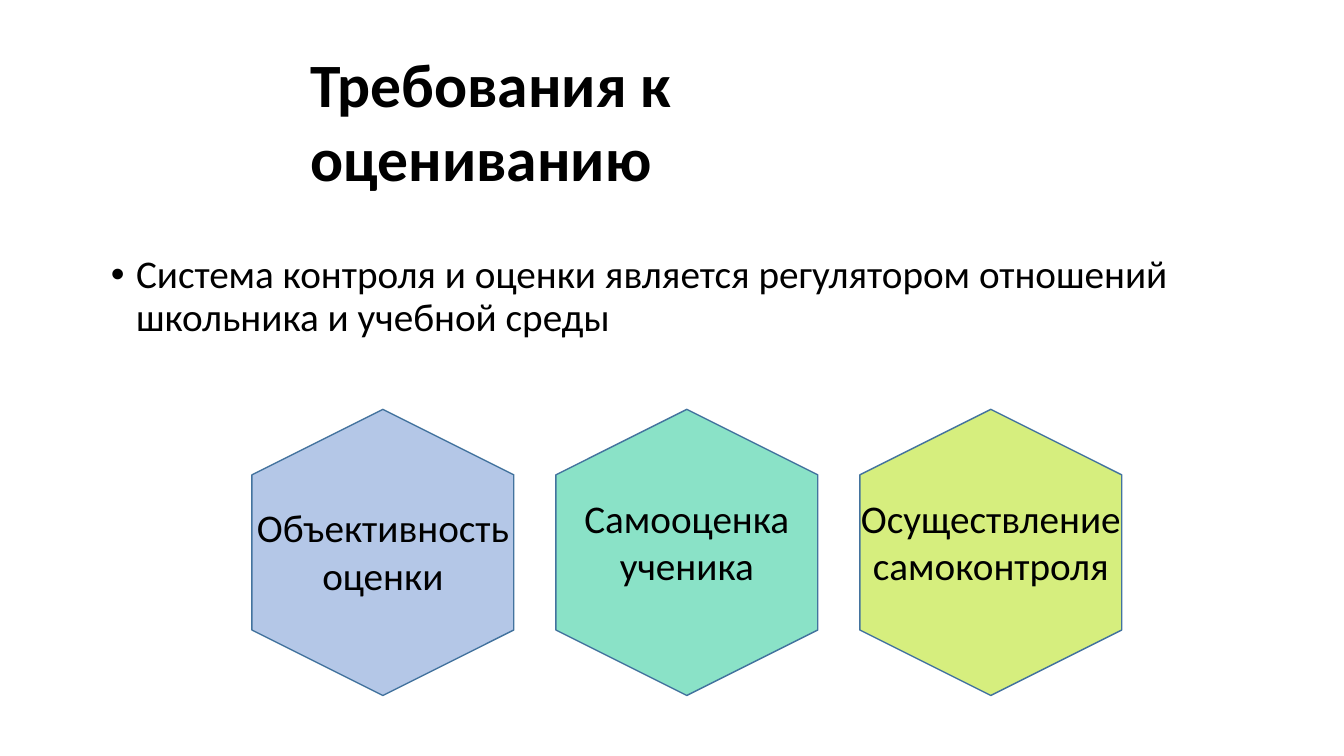
import pptx
import pptx.util
import pptx.dml.color
import pptx.enum.shapes
import pptx.enum.text
from pptx.util import Cm, Pt

TITLE = "Требования к оцениванию"
BODY = "Система контроля и оценки является регулятором отношений школьника и учебной среды"
REQUIREMENTS = [
    ("Объективность оценки", "B4C7E7", 12.57),
    ("Самооценка ученика", "8AE2C7", 12.34),
    ("Осуществление самоконтроля", "D6EE7E", 12.34),
]

FIRST_CENTER, PITCH = 9.65, 7.66
HEX_W, HEX_H, HEX_TOP = 7.21, 6.6, 10.62
LABEL_W, LABEL_H = 7.95, 2.64


def rgb(value):
    return pptx.dml.color.RGBColor.from_string(value)


def place(sp, left, top, width, height):
    sp.left, sp.top, sp.width, sp.height = Cm(left), Cm(top), Cm(width), Cm(height)


def write(sp, text, size, align, bold=False):
    tf = sp.text_frame
    tf.word_wrap = True
    tf.auto_size = pptx.enum.text.MSO_AUTO_SIZE.NONE
    tf.vertical_anchor = pptx.enum.text.MSO_ANCHOR.TOP
    p = tf.paragraphs[0]
    p.text = text
    p.alignment = align
    p.font.name = "Calibri"
    p.font.size = Pt(size)
    p.font.bold = bold
    p.font.color.rgb = rgb("000000")
    return p


def add_requirement(s, center, text, color, label_top):
    sp = s.shapes.add_shape(
        pptx.enum.shapes.MSO_SHAPE.HEXAGON,
        Cm(center - HEX_W / 2), Cm(HEX_TOP), Cm(HEX_W), Cm(HEX_H))
    sp.rotation = 270
    sp.shadow.inherit = False
    sp.fill.solid()
    sp.fill.fore_color.rgb = rgb(color)
    sp.line.color.rgb = rgb("43739E")
    sp.line.width = Pt(1)
    label = s.shapes.add_textbox(
        Cm(center - LABEL_W / 2), Cm(label_top), Cm(LABEL_W), Cm(LABEL_H))
    write(label, text, 28, pptx.enum.text.PP_ALIGN.CENTER)


def main():
    prs = pptx.Presentation()
    prs.slide_width, prs.slide_height = Cm(33.87), Cm(19.05)
    s = prs.slides.add_slide(prs.slide_layouts[1])

    title, body = s.shapes.title, s.placeholders[1]
    place(title, 7.57, 1.02, 18.26, 4.04)
    write(title, TITLE, 44, pptx.enum.text.PP_ALIGN.LEFT, bold=True)

    place(body, 2.54, 6.3, 29, 12.09)
    p = write(body, BODY, 28, pptx.enum.text.PP_ALIGN.LEFT)
    p.line_spacing = 0.9
    p.space_before = Pt(10)
    pPr = p._p.get_or_add_pPr()
    pPr.set("marL", str(Pt(18)))
    pPr.set("indent", str(-Pt(18)))

    for i, (text, color, label_top) in enumerate(REQUIREMENTS):
        add_requirement(s, FIRST_CENTER + i * PITCH, text, color, label_top)

    prs.save("out.pptx")


if __name__ == "__main__":
    main()
